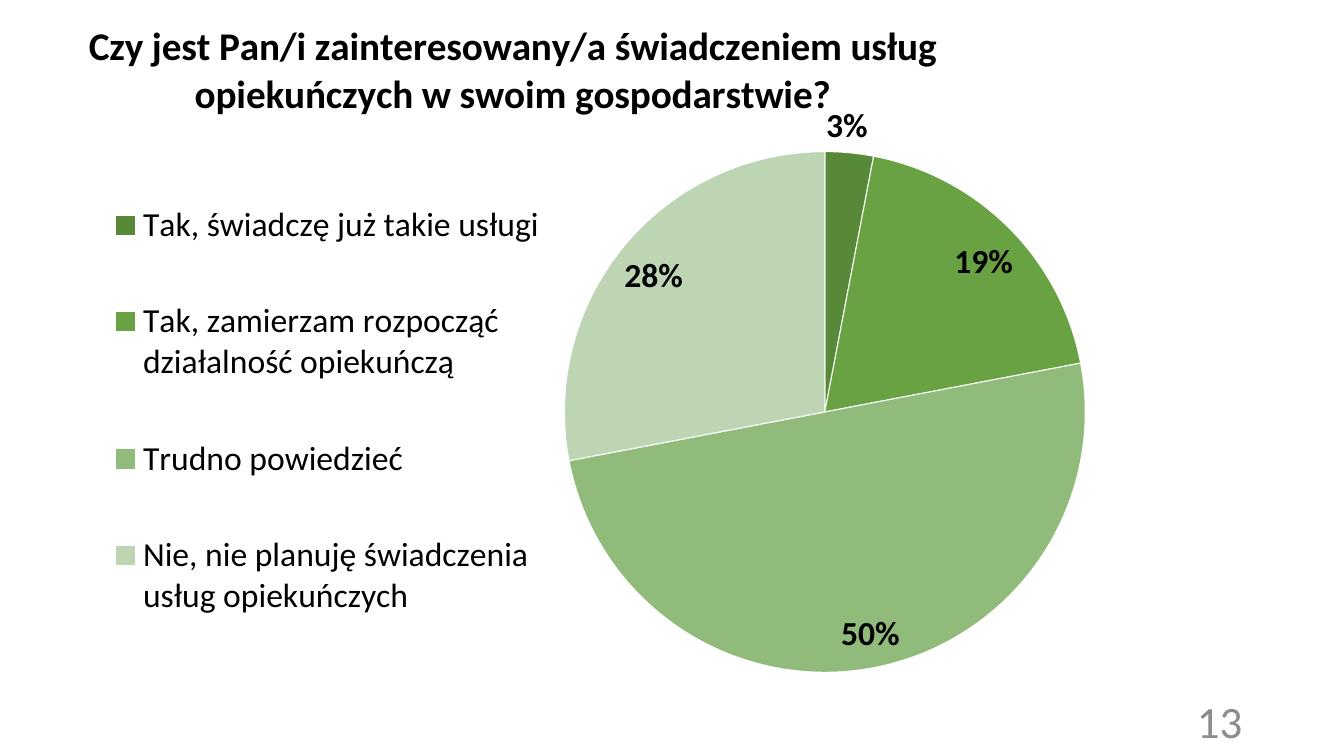
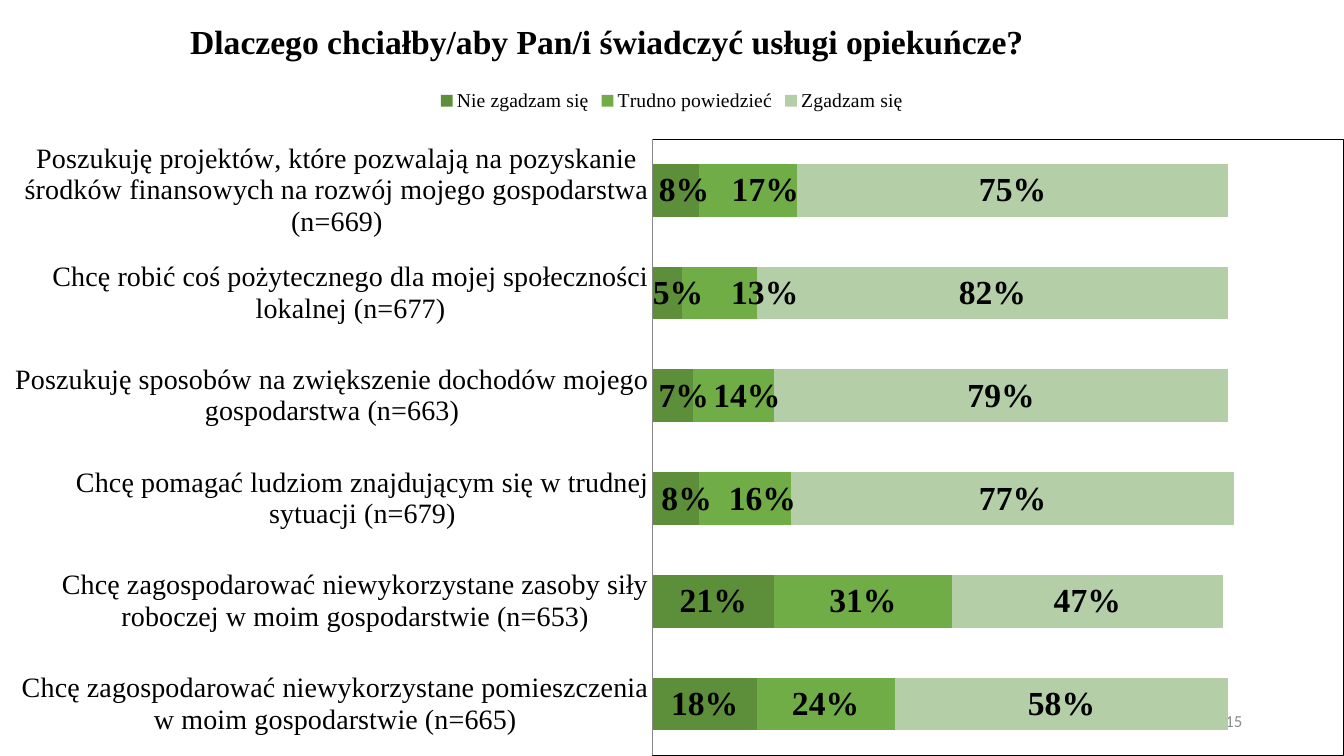
import pptx
import pptx.chart.data
import pptx.dml.color
import pptx.enum.chart
import pptx.enum.text
import pptx.oxml
import pptx.oxml.ns
import pptx.util

Inches = pptx.util.Inches
Pt = pptx.util.Pt
RGBColor = pptx.dml.color.RGBColor
ChartType = pptx.enum.chart.XL_CHART_TYPE
LabelPosition = pptx.enum.chart.XL_LABEL_POSITION
qn = pptx.oxml.ns.qn

BLACK = RGBColor(0x00, 0x00, 0x00)
WHITE = RGBColor(0xFF, 0xFF, 0xFF)
NUMBER_GREY = RGBColor(0x8C, 0x8C, 0x8C)
AXIS_GREY = RGBColor(0x88, 0x88, 0x88)
PIE_GREENS = [
    RGBColor(0x58, 0x89, 0x38),
    RGBColor(0x69, 0xA2, 0x42),
    RGBColor(0x90, 0xBB, 0x7B),
    RGBColor(0xBE, 0xD5, 0xB4),
]
BAR_GREENS = [
    RGBColor(0x5D, 0x8F, 0x3B),
    RGBColor(0x70, 0xAD, 0x47),
    RGBColor(0xB4, 0xCF, 0xA8),
]

INTEREST = {
    "Tak, świadczę już takie usługi": 3,
    "Tak, zamierzam rozpocząć działalność opiekuńczą": 19,
    "Trudno powiedzieć": 50,
    "Nie, nie planuję świadczenia usług opiekuńczych": 28,
}
REASONS = [
    "Chcę zagospodarować niewykorzystane pomieszczenia w moim gospodarstwie (n=665)",
    "Chcę zagospodarować niewykorzystane zasoby siły roboczej w moim gospodarstwie (n=653)",
    "Chcę pomagać ludziom znajdującym się w trudnej sytuacji (n=679)",
    "Poszukuję sposobów na zwiększenie dochodów mojego gospodarstwa (n=663)",
    "Chcę robić coś pożytecznego dla mojej społeczności lokalnej (n=677)",
    "Poszukuję projektów, które pozwalają na pozyskanie środków finansowych "
    "na rozwój mojego gospodarstwa (n=669)",
]
ANSWERS = {
    "Nie zgadzam się": [0.18, 0.21, 0.08, 0.07, 0.05, 0.08],
    "Trudno powiedzieć": [0.24, 0.31, 0.16, 0.14, 0.13, 0.17],
    "Zgadzam się": [0.58, 0.47, 0.77, 0.79, 0.82, 0.75],
}
LABEL_SHIFTS = {
    "Nie zgadzam się": {2: 0.008, 3: 0.008, 4: 0.008, 5: 0.006},
    "Trudno powiedzieć": {2: 0.013, 3: 0.01, 4: 0.034, 5: 0.013},
}


def chart_part(xml):
    namespaces = pptx.oxml.ns.nsdecls("c", "a")
    return pptx.oxml.parse_xml(f"<c:part {namespaces}>{xml}</c:part>")[0]


def set_layout(parent, previous, modes, **lengths):
    for old_layout in parent.findall(qn("c:layout")):
        parent.remove(old_layout)
    values = "".join(f'<c:{key} val="{value}"/>' for key, value in lengths.items())
    layout = chart_part(
        f"<c:layout><c:manualLayout>{modes}{values}</c:manualLayout></c:layout>"
    )
    if previous:
        parent.find(qn(previous)).addnext(layout)
    else:
        parent.insert(0, layout)
    return layout


class Deck:
    EDGE = '<c:xMode val="edge"/><c:yMode val="edge"/>'
    INNER = '<c:layoutTarget val="inner"/>' + EDGE
    LABEL_SIZE = 24

    def __init__(self):
        self.presentation = pptx.Presentation()
        self.presentation.slide_width = Inches(13.33)
        self.presentation.slide_height = Inches(7.5)
        self.slide = None

    def add_slide(self):
        self.slide = self.presentation.slides.add_slide(
            self.presentation.slide_layouts[6]
        )

    def style_font(self, font, name, size, bold=False, color=BLACK):
        font.name = name
        font.size = Pt(size)
        font.bold = bold
        font.color.rgb = color

    def add_number(self, text, size):
        box = self.slide.shapes.add_textbox(
            Inches(9.42), Inches(6.95), Inches(3), Inches(0.4)
        )
        frame = box.text_frame
        frame.word_wrap = True
        frame.vertical_anchor = pptx.enum.text.MSO_ANCHOR.MIDDLE
        paragraph = frame.paragraphs[0]
        paragraph.text = text
        paragraph.alignment = pptx.enum.text.PP_ALIGN.RIGHT
        self.style_font(paragraph.font, "Calibri", size, color=NUMBER_GREY)

    def add_chart(self, kind, box, categories, series, font, title, title_size,
                  title_at, legend_size, plot_area):
        data = pptx.chart.data.CategoryChartData()
        data.categories = categories
        for name, values in series.items():
            data.add_series(name, values)
        chart = self.slide.shapes.add_chart(
            kind, *[Inches(length) for length in box], data
        ).chart
        self.style_font(chart.font, font, 10)

        chart.has_title = True
        paragraph = chart.chart_title.text_frame.paragraphs[0]
        paragraph.text = title
        self.style_font(paragraph.font, font, title_size, bold=True)
        left, top = title_at
        title_element = chart.chart_title._element
        set_layout(title_element, "c:tx", self.EDGE, x=left, y=top)

        chart.has_legend = True
        chart.legend.position = pptx.enum.chart.XL_LEGEND_POSITION.TOP
        chart.legend.include_in_layout = False
        self.style_font(chart.legend.font, font, legend_size)

        left, top, width, height = plot_area
        area = chart._chartSpace.chart.plotArea
        set_layout(area, None, self.INNER, x=left, y=top, w=width, h=height)
        return chart

    def style_labels(self, labels, font, position):
        labels.number_format = "0%"
        labels.number_format_is_linked = False
        labels.position = position
        self.style_font(labels.font, font, self.LABEL_SIZE, bold=True)

    def shift_label(self, label, font, position, shift):
        self.style_font(label.font, font, self.LABEL_SIZE, bold=True)
        label.position = position
        element = label._dLbl
        layout = set_layout(element, "c:idx", "", x=shift, y=0)
        layout.addnext(chart_part('<c:numFmt formatCode="0%" sourceLinked="0"/>'))
        return element

    def add_pie(self, answers, legend_area, **options):
        font = options["font"]
        chart = self.add_chart(
            ChartType.PIE, categories=list(answers),
            series={"Series 1": list(answers.values())}, **options
        )
        left, top, width, height = legend_area
        set_layout(chart.legend._element, "c:legendPos", self.EDGE,
                   x=left, y=top, w=width, h=height)
        plot = chart.plots[0]
        plot.vary_by_categories = True
        points = plot.series[0].points
        labels = plot.series[0].data_labels
        self.style_labels(labels, font, LabelPosition.BEST_FIT)
        labels.show_value = False
        labels.show_percentage = True
        smallest = self.shift_label(
            points[0].data_label, font, LabelPosition.OUTSIDE_END, -0.022
        )
        smallest.find(qn("c:showVal")).set("val", "0")
        smallest.find(qn("c:showPercent")).set("val", "1")
        for index, color in enumerate(PIE_GREENS):
            slice_format = points[index].format
            slice_format.fill.solid()
            slice_format.fill.fore_color.rgb = color
            slice_format.line.color.rgb = WHITE
            slice_format.line.width = Pt(0.75)

    def add_stacked_bars(self, categories, series, shifts, **options):
        font = options["font"]
        chart = self.add_chart(
            ChartType.BAR_STACKED, categories=categories, series=series, **options
        )
        plot = chart.plots[0]
        plot.vary_by_categories = False
        plot.gap_width = 95
        plot.overlap = 100
        for bars, color in zip(plot.series, BAR_GREENS):
            bars.format.fill.solid()
            bars.format.fill.fore_color.rgb = color
            self.style_labels(bars.data_labels, font, LabelPosition.CENTER)
            bars.data_labels.show_value = True
            for index, shift in shifts.get(bars.name, {}).items():
                self.shift_label(
                    bars.points[index].data_label, font, LabelPosition.CENTER, shift
                )

        values = chart.value_axis
        values.minimum_scale = 0
        values.maximum_scale = 1.2
        values.has_major_gridlines = False
        values.visible = False
        axis = chart.category_axis
        axis.major_tick_mark = pptx.enum.chart.XL_TICK_MARK.NONE
        axis.format.line.color.rgb = AXIS_GREY
        axis.format.line.width = Pt(0.75)
        self.style_font(axis.tick_labels.font, font, 20)
        chart._chartSpace.chart.plotArea.append(chart_part(
            '<c:spPr><a:noFill/><a:ln w="9525"><a:solidFill>'
            f'<a:srgbClr val="{BLACK}"/></a:solidFill></a:ln></c:spPr>'
        ))


def main():
    deck = Deck()

    deck.add_slide()
    deck.add_pie(
        INTEREST,
        legend_area=(0.045, 0.216, 0.392, 0.755),
        box=(0.66, 0, 10.73, 6.87),
        font="Calibri",
        title="Czy jest Pan/i zainteresowany/a świadczeniem usług "
              "opiekuńczych w swoim gospodarstwie?",
        title_size=28,
        title_at=(0.014, 0.018),
        legend_size=24,
        plot_area=(0.46, 0.219, 0.482, 0.752),
    )
    deck.add_number("13", 32)

    deck.add_slide()
    deck.add_number("15", 12)
    deck.add_stacked_bars(
        REASONS,
        ANSWERS,
        LABEL_SHIFTS,
        box=(0, 0, 13.33, 7.5),
        font="Times New Roman",
        title="Dlaczego chciałby/aby Pan/i świadczyć usługi opiekuńcze?",
        title_size=24,
        title_at=(0.137, 0.018),
        legend_size=14,
        plot_area=(0.486, 0.184, 0.514, 0.816),
    )

    deck.presentation.save("out.pptx")


if __name__ == "__main__":
    main()
